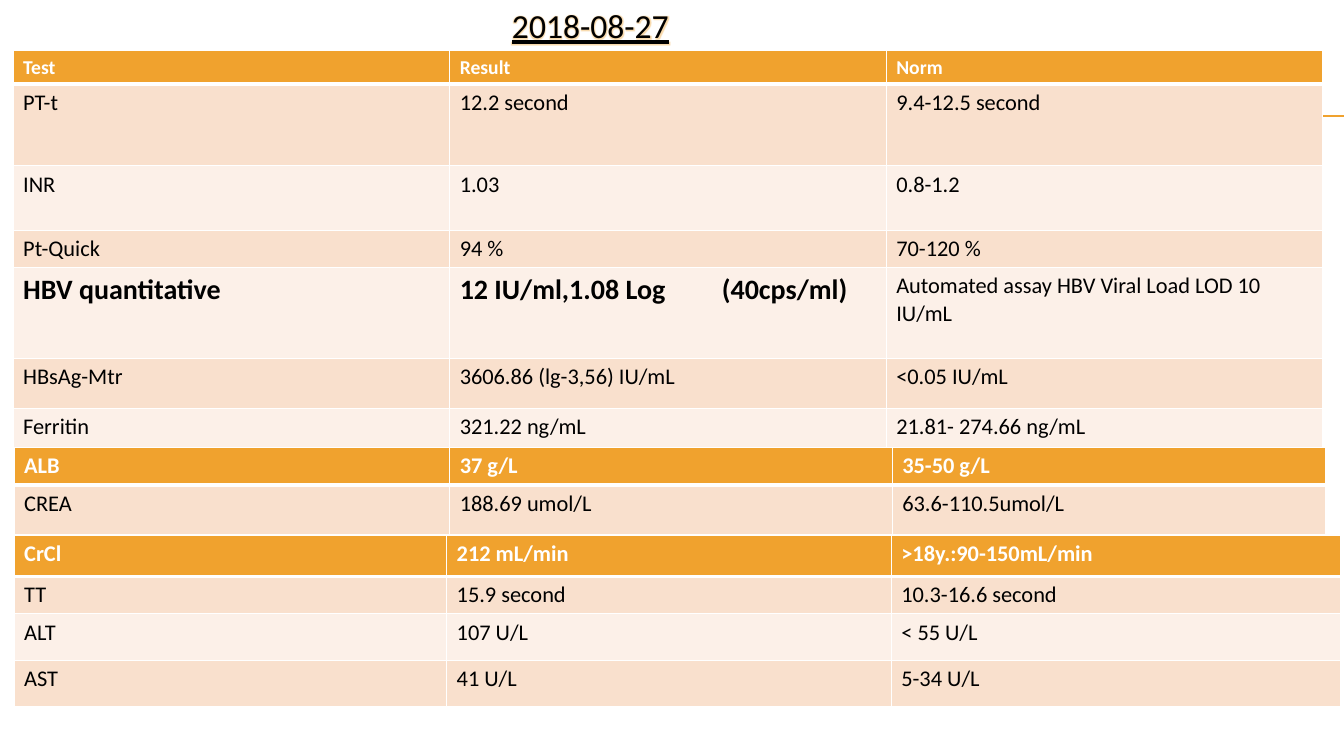
from lxml import etree
from pptx import Presentation, oxml
from pptx.dml.color import RGBColor
from pptx.enum import shapes, text
from pptx.oxml import ns
from pptx.util import Inches, Pt

ORANGE = RGBColor(0xF0, 0xA2, 0x2E)
PEACH = RGBColor(0xF9, 0xE0, 0xCD)
CREAM = RGBColor(0xFC, 0xF0, 0xE8)
WHITE = RGBColor(0xFF, 0xFF, 0xFF)
BLACK = RGBColor(0x00, 0x00, 0x00)

COAGULATION = [
    (0.33, ["Test", "Result", "Norm"]),
    (0.81, ["PT-t", "12.2 second", "9.4-12.5 second"]),
    (0.64, ["INR", "1.03", "0.8-1.2"]),
    (0.37, ["Pt-Quick", "94 %", "70-120 %"]),
    (0.9, ["HBV quantitative", "12 IU/ml,1.08 Log\t(40cps/ml)",
           "Automated assay HBV Viral Load LOD 10 IU/mL"]),
    (0.5, ["HBsAg-Mtr", "3606.86 (lg-3,56) IU/mL", "<0.05 IU/mL"]),
    (0.39, ["Ferritin", "321.22 ng/mL", "21.81- 274.66 ng/mL"]),
]
KIDNEY = [
    (0.37, ["ALB", "37 g/L", "35-50 g/L"]),
    (0.49, ["CREA", "188.69 umol/L", "63.6-110.5umol/L"]),
]
LIVER = [
    (0.41, ["CrCl", "212 mL/min", ">18y.:90-150mL/min"]),
    (0.37, ["TT", "15.9 second", "10.3-16.6 second"]),
    (0.46, ["ALT", "107 U/L", "< 55 U/L"]),
    (0.46, ["AST", "41 U/L", "5-34 U/L"]),
]


class LabSlide:
    """Draws lab result elements in one style on one slide."""

    font = "Calibri"

    def __init__(self, slide):
        self.slide = slide

    def format_runs(self, paragraph, size, color, bold=False, underline=False):
        for run in paragraph.runs:
            run.font.name = self.font
            run.font.size = Pt(size)
            run.font.color.rgb = color
            run.font.bold = bold
            run.font.underline = underline

    def line(self, left, right, y):
        connector = self.slide.shapes.add_connector(
            shapes.MSO_CONNECTOR.STRAIGHT,
            Inches(left), Inches(y), Inches(right), Inches(y))
        connector.line.color.rgb = ORANGE
        connector.line.width = Pt(0.75)
        etree.SubElement(connector._element.spPr, ns.qn("a:effectLst"))

    def title(self, wording, left, top, width, height):
        box = self.slide.shapes.add_textbox(
            Inches(left), Inches(top), Inches(width), Inches(height))
        frame = box.text_frame
        frame.word_wrap = False
        frame.auto_size = text.MSO_AUTO_SIZE.SHAPE_TO_FIT_TEXT
        frame.text = wording
        paragraph = frame.paragraphs[0]
        self.format_runs(paragraph, 24, BLACK, underline=True)
        glow = oxml.parse_xml(
            f'<a:effectLst {ns.nsdecls("a")}><a:glow rad="38100"><a:srgbClr val="{ORANGE}">'
            '<a:alpha val="40000"/></a:srgbClr></a:glow></a:effectLst>')
        paragraph.runs[0].font._element.find(ns.qn("a:solidFill")).addnext(glow)

    def borders(self, cell, bottom):
        properties = cell._tc.get_or_add_tcPr()
        for side, width in (("L", 1), ("R", 1), ("T", 1), ("B", bottom)):
            properties.append(oxml.parse_xml(
                f'<a:ln{side} {ns.nsdecls("a")} w="{Pt(width)}"><a:solidFill>'
                f'<a:srgbClr val="{WHITE}"/></a:solidFill></a:ln{side}>'))

    def cell(self, cell, wording, fill, size, color, bold, bottom):
        self.borders(cell, bottom)
        cell.fill.solid()
        cell.fill.fore_color.rgb = fill
        cell.text_frame.text = wording
        paragraph = cell.text_frame.paragraphs[0]
        self.format_runs(paragraph, size, color, bold)
        if "\t" in wording:
            paragraph._p.get_or_add_pPr().append(oxml.parse_xml(
                f'<a:tabLst {ns.nsdecls("a")}><a:tab pos="{Inches(2.6)}" algn="l"/></a:tabLst>'))

    def table(self, left, top, widths, rows, header_size=16):
        height = sum(row_height for row_height, _ in rows)
        table = self.slide.shapes.add_table(
            len(rows), len(widths), Inches(left), Inches(top),
            Inches(sum(widths)), Inches(height)).table
        for column, width in zip(table.columns, widths):
            column.width = Inches(width)
        for index, (row_height, wordings) in enumerate(rows):
            row = table.rows[index]
            row.height = Inches(row_height)
            highlighted = wordings[0].startswith("HBV")
            for position, (cell, wording) in enumerate(zip(row.cells, wordings)):
                if index == 0:
                    self.cell(cell, wording, ORANGE, header_size, WHITE, True, 3)
                else:
                    bold = highlighted and position < 2
                    self.cell(cell, wording, PEACH if index % 2 else CREAM,
                              20 if bold else 16, BLACK, bold, 1)


def main():
    presentation = Presentation()
    presentation.slide_width = Inches(13.33)
    presentation.slide_height = Inches(7.5)
    lab = LabSlide(presentation.slides.add_slide(presentation.slide_layouts[6]))
    for y in (1.15, 1.16):
        lab.line(0.75, 13.33, y)
    lab.title("2018-08-27", 4.98, 0, 1.77, 0.5)
    lab.table(0.13, 0.5, [4.33] * 3, COAGULATION, header_size=14)
    lab.table(0.14, 4.44, [4.32, 4.39, 4.3], KIDNEY)
    lab.table(0.14, 5.31, [4.29, 4.41, 4.46], LIVER)
    presentation.save("out.pptx")


if __name__ == "__main__":
    main()
